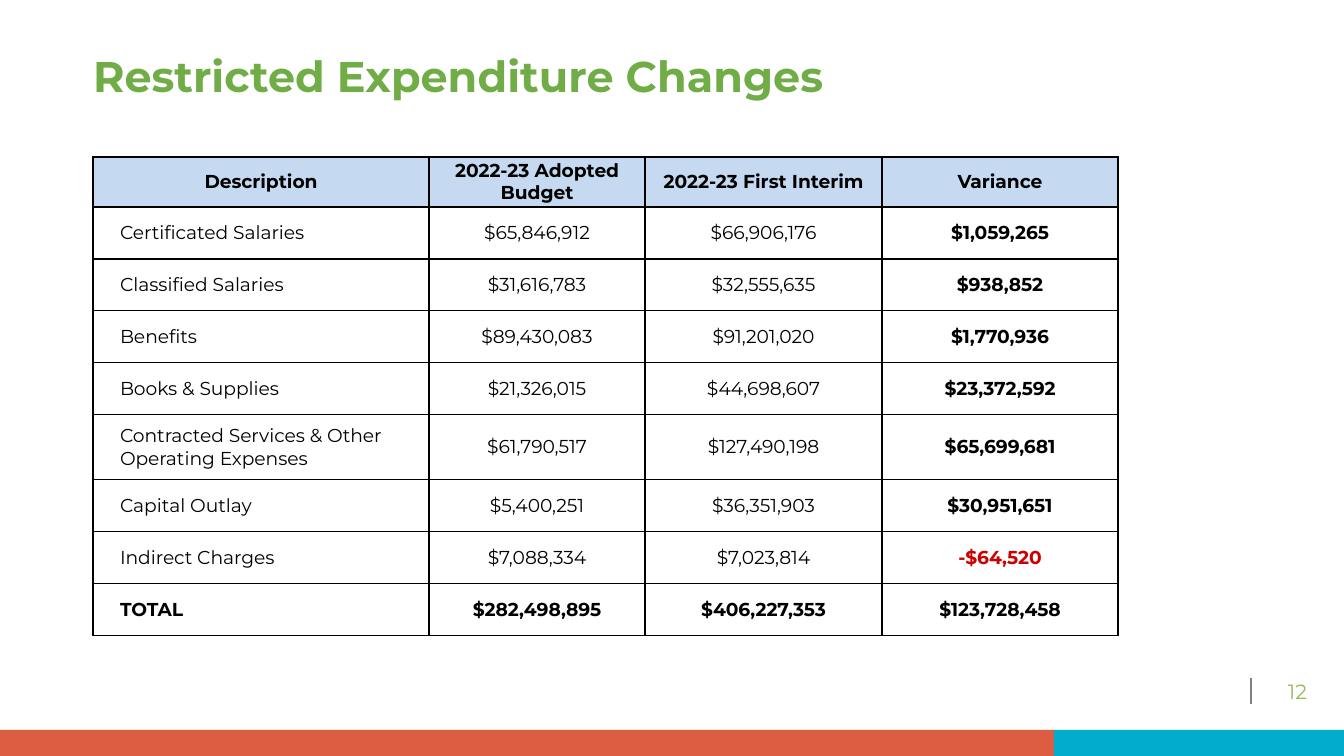
import pptx
import pptx.dml.color
import pptx.enum.shapes
import pptx.enum.text
import pptx.oxml
import pptx.oxml.ns
import pptx.util

ALIGN = pptx.enum.text.PP_ALIGN
ANCHOR = pptx.enum.text.MSO_ANCHOR
FONT = "Montserrat"
BLACK = "000000"
RED = "CC0000"

HEADER = ["Description", "2022-23 Adopted Budget", "2022-23 First Interim", "Variance"]
EXPENDITURES = [
    ["Certificated Salaries", "$65,846,912", "$66,906,176", "$1,059,265"],
    ["Classified Salaries", "$31,616,783", "$32,555,635", "$938,852"],
    ["Benefits", "$89,430,083", "$91,201,020", "$1,770,936"],
    ["Books & Supplies", "$21,326,015", "$44,698,607", "$23,372,592"],
    ["Contracted Services & Other Operating Expenses", "$61,790,517", "$127,490,198", "$65,699,681"],
    ["Capital Outlay", "$5,400,251", "$36,351,903", "$30,951,651"],
    ["Indirect Charges", "$7,088,334", "$7,023,814", "-$64,520"],
    ["TOTAL", "$282,498,895", "$406,227,353", "$123,728,458"],
]
COLUMN_WIDTHS = [336, 216, 237, 236]
ROW_HEIGHTS = [50] + [52] * 4 + [65] + [52] * 3


def px(n):
    return pptx.util.Emu(round(n * 914400 / 134.4))


def rgb(color):
    return pptx.dml.color.RGBColor.from_string(color)


def write(tf, text, size, color, bold=False, align=ALIGN.LEFT):
    tf.text = text
    p = tf.paragraphs[0]
    p.alignment = align
    font = p.runs[0].font
    font.name = FONT
    font.size = pptx.util.Pt(size)
    font.bold = bold
    font.color.rgb = rgb(color)


def set_frame(tf, anchor):
    tf.margin_left = tf.margin_top = tf.margin_right = tf.margin_bottom = 0
    tf.word_wrap = True
    tf.vertical_anchor = anchor


def add_title(slide, text, x, y, w, h):
    sp = slide.shapes.title
    sp.left, sp.top, sp.width, sp.height = px(x), px(y), px(w), px(h)
    tf = sp.text_frame
    set_frame(tf, ANCHOR.TOP)
    tf.auto_size = pptx.enum.text.MSO_AUTO_SIZE.NONE
    write(tf, text, 23, "70AD47", bold=True)
    tf.paragraphs[0].line_spacing = 0.9


def add_bar(slide, x, y, w, h, color):
    sp = slide.shapes.add_shape(
        pptx.enum.shapes.MSO_SHAPE.RECTANGLE, px(x), px(y), px(w), px(h))
    sp.shadow.inherit = False
    sp.fill.solid()
    sp.fill.fore_color.rgb = rgb(color)
    sp.line.fill.background()


def add_line(slide, x1, y1, x2, y2, color, width):
    line = slide.shapes.add_connector(
        pptx.enum.shapes.MSO_CONNECTOR.STRAIGHT, px(x1), px(y1), px(x2), px(y2))
    line.line.color.rgb = rgb(color)
    line.line.width = pptx.util.Pt(width)
    effects = pptx.oxml.parse_xml("<a:effectLst %s/>" % pptx.oxml.ns.nsdecls("a"))
    line._element.spPr.append(effects)


def add_page_number(slide, text, x, y, w, h):
    tf = slide.shapes.add_textbox(px(x), px(y), px(w), px(h)).text_frame
    set_frame(tf, ANCHOR.MIDDLE)
    write(tf, text, 11, "94BC56", align=ALIGN.CENTER)


def set_borders(cell, widths):
    tc_pr = cell._tc.get_or_add_tcPr()
    for side, width in widths.items():
        tc_pr.append(pptx.oxml.parse_xml(
            '<a:ln%s %s w="%d"><a:solidFill><a:srgbClr val="%s"/></a:solidFill></a:ln%s>'
            % (side, pptx.oxml.ns.nsdecls("a"), pptx.util.Pt(width), BLACK, side)))


def format_cell(cell, text, is_header, is_label, is_last, bold):
    cell.margin_left = px(27 if is_label and not is_header else 0)
    cell.margin_top = cell.margin_right = cell.margin_bottom = 0
    cell.vertical_anchor = ANCHOR.MIDDLE
    set_borders(cell, {"L": 0.75, "R": 1 if is_last else 0.75,
                       "T": 1 if is_header else 0.75, "B": 0.75})
    if is_header:
        cell.fill.solid()
        cell.fill.fore_color.rgb = rgb("C5D9F1")
    else:
        cell.fill.background()
    align = ALIGN.LEFT if is_label and not is_header else ALIGN.CENTER
    color = RED if text.startswith("-") else BLACK
    write(cell.text_frame, text, 10, color, bold, align)


def add_budget_table(slide, x, y):
    rows = [HEADER] + EXPENDITURES
    table = slide.shapes.add_table(
        len(rows), len(HEADER), px(x), px(y),
        px(sum(COLUMN_WIDTHS)), px(sum(ROW_HEIGHTS))).table
    table.first_row = table.horz_banding = False
    for column, width in zip(table.columns, COLUMN_WIDTHS):
        column.width = px(width)
    for row, height in zip(table.rows, ROW_HEIGHTS):
        row.height = px(height)
    for i, values in enumerate(rows):
        for j, text in enumerate(values):
            is_last = j == len(HEADER) - 1
            bold = is_last or i in (0, len(rows) - 1)
            format_cell(table.cell(i, j), text, i == 0, j == 0, is_last, bold)


def main():
    prs = pptx.Presentation()
    prs.slide_width, prs.slide_height = px(1344), px(756)
    slide = prs.slides.add_slide(prs.slide_layouts[5])
    add_bar(slide, 0, 730, 1056, 26, "DD5D43")
    add_bar(slide, 1054, 730, 290, 26, "01ACCD")
    add_line(slide, 1251, 678, 1251, 704, "808080", 1)
    add_title(slide, "Restricted Expenditure Changes", 93, 55, 902, 47)
    add_page_number(slide, "12", 1251, 678, 93, 26)
    add_budget_table(slide, 93, 157)
    prs.save("out.pptx")


if __name__ == "__main__":
    main()
